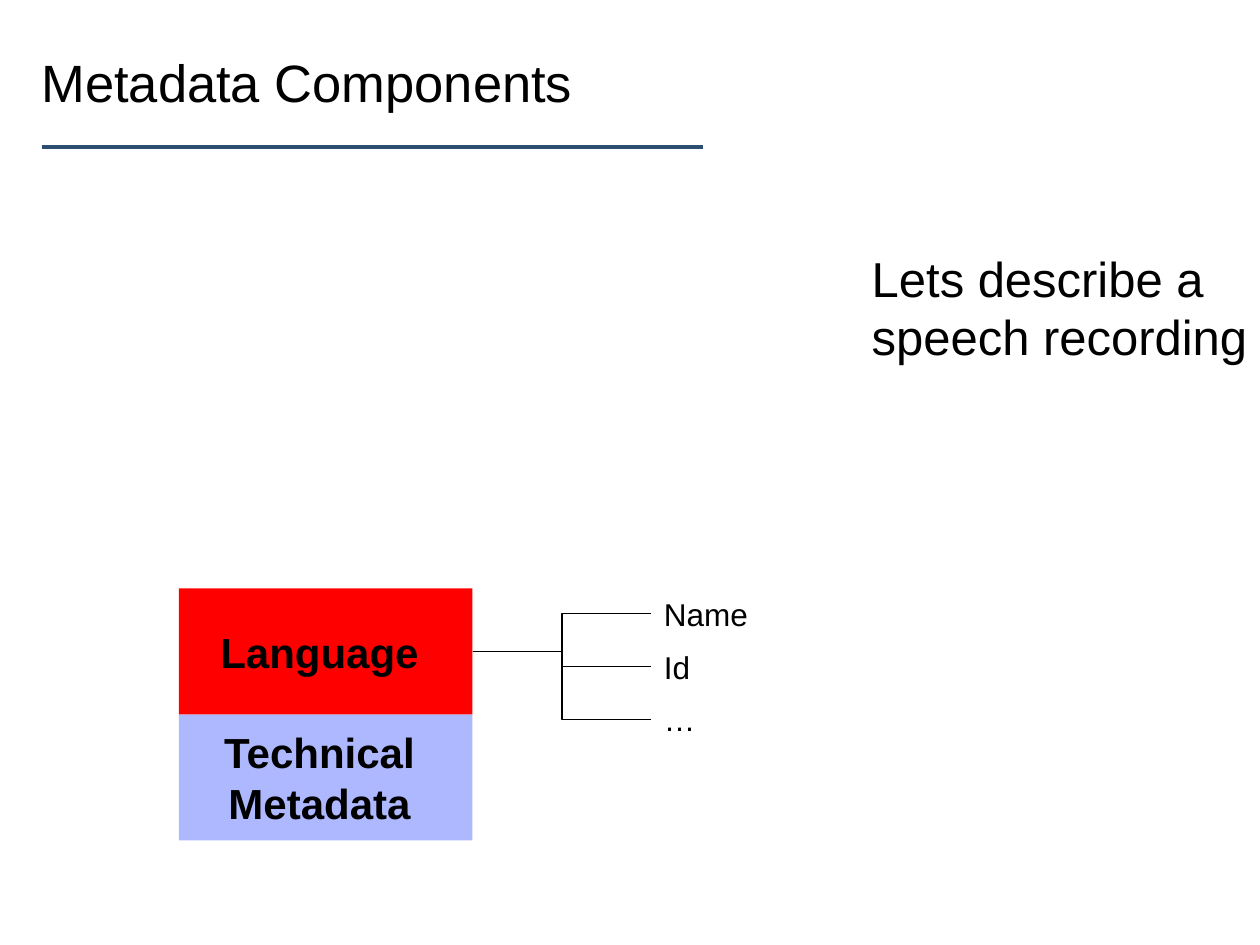
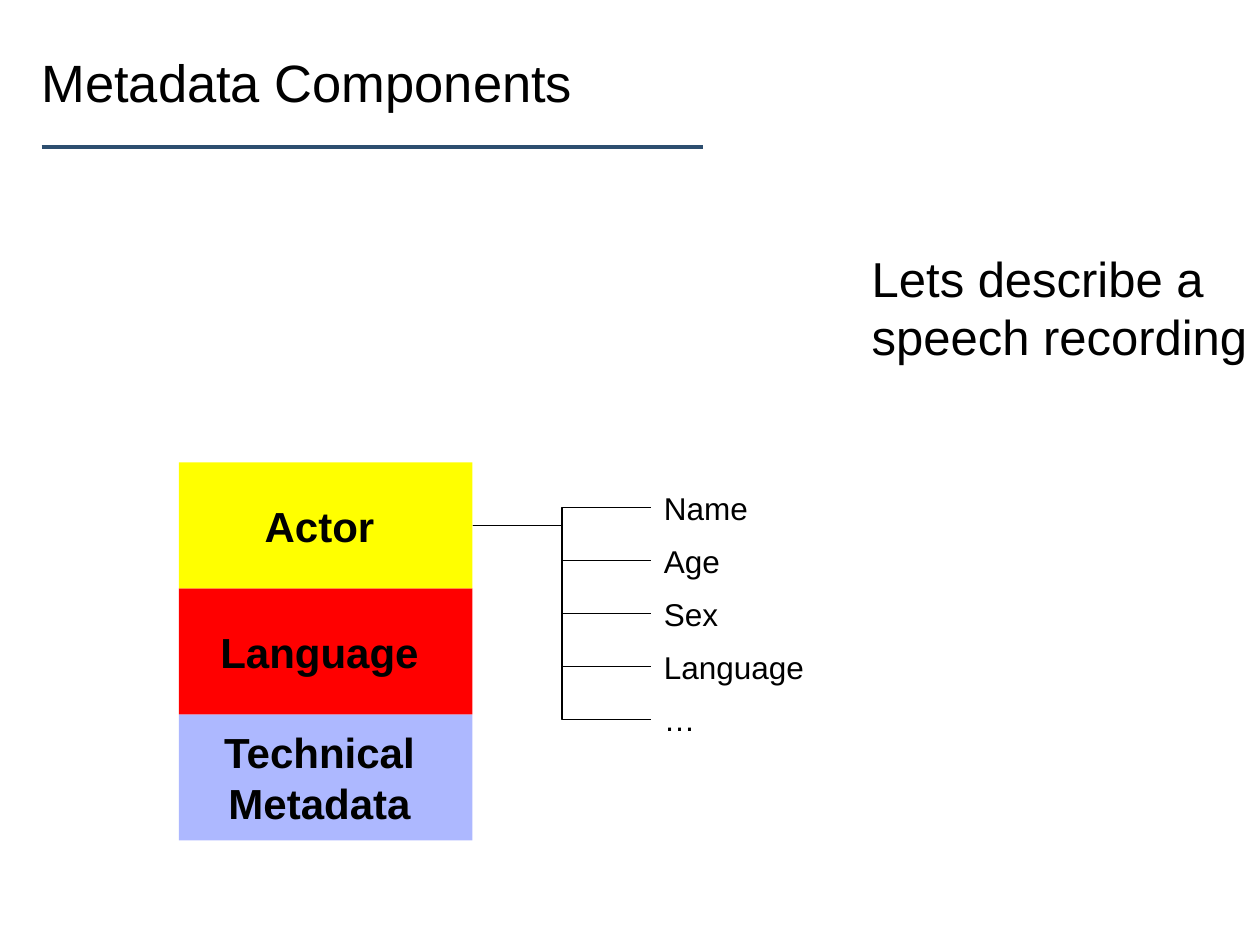
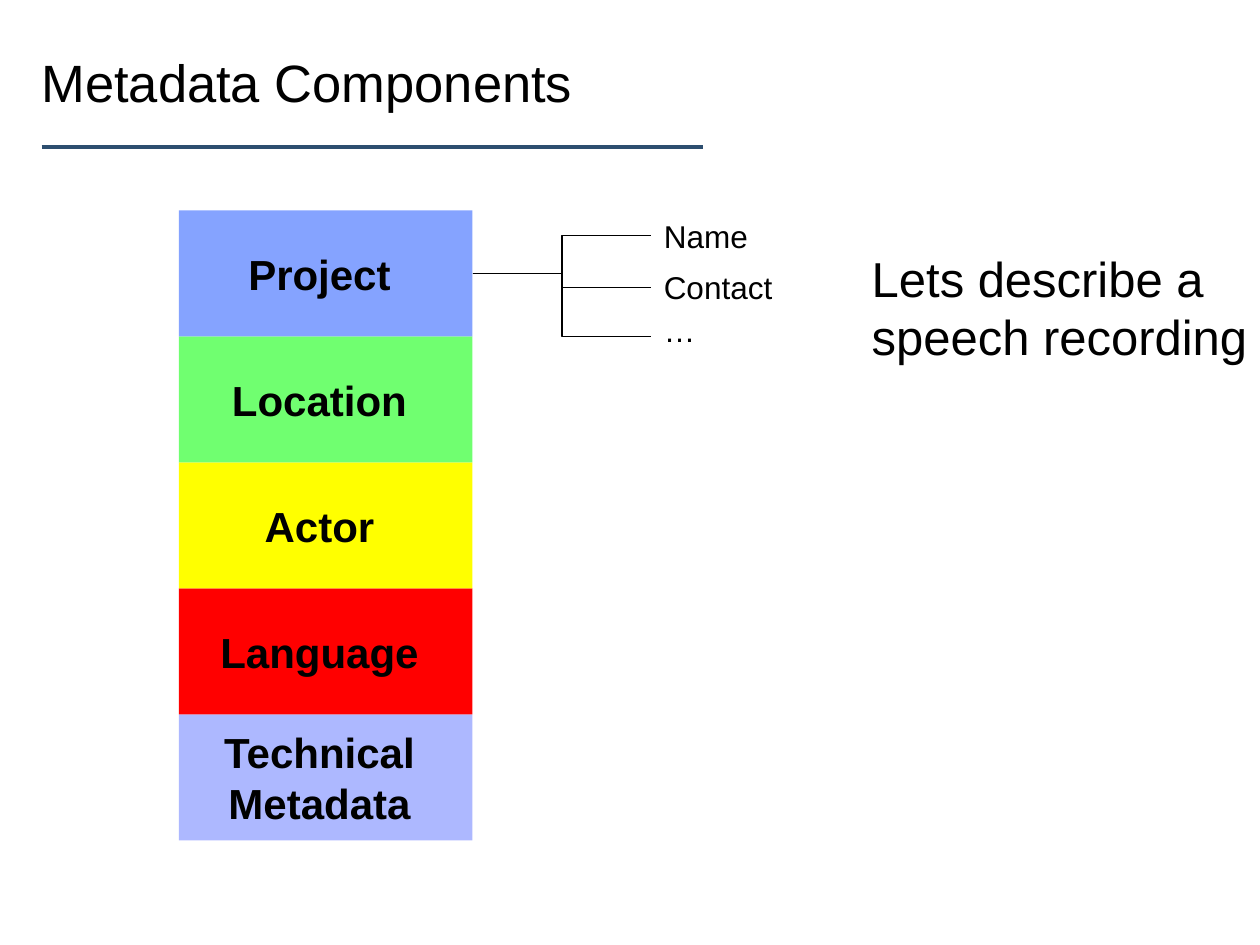
"""Build three slides that stack up metadata components for a speech recording."""
from lxml import etree
from pptx import Presentation
from pptx import util as u
from pptx.dml.color import RGBColor
from pptx.enum import shapes, text
from pptx.oxml.ns import qn

COLOURS = {
    "text": "000000",
    "rule": "2D4E6F",
    "Technical\nMetadata": "ADB8FF",
    "Language": "FF0000",
    "Actor": "FFFF00",
    "Location": "70FF70",
    "Project": "85A3FF",
}
COMPONENTS = ["Technical\nMetadata", "Language", "Actor", "Location", "Project"]
FIELD_WIDTHS = {"Name": 0.88, "Id": 0.41, "Age": 0.67, "Sex": 0.64,
                "Language": 1.33, "Contact": 1.07, "…": 0.45}
FIELD_STEP = 0.42
LAST_FIELD_TOP = 5.51


class Deck:
    """Hold the shared style and the current slide."""

    font = "Arial"

    def __init__(self):
        self.presentation = Presentation()
        self.presentation.slide_width = u.Inches(10)
        self.presentation.slide_height = u.Inches(7.5)
        self.slide = None

    def colour(self, name):
        return RGBColor.from_string(COLOURS[name])

    def set_text(self, shape, words, size, bold=False, align=text.PP_ALIGN.LEFT,
                 anchor=text.MSO_ANCHOR.TOP, left_inset=0.1, wrap=False):
        frame = shape.text_frame
        frame.text = words
        frame.word_wrap = wrap
        frame.auto_size = text.MSO_AUTO_SIZE.NONE
        frame.vertical_anchor = anchor
        frame.margin_left = u.Inches(left_inset)
        for paragraph in frame.paragraphs:
            paragraph.alignment = align
            for run in paragraph.runs:
                run.font.name = self.font
                run.font.size = u.Pt(size)
                run.font.bold = bold
                run.font.color.rgb = self.colour("text")

    def text_box(self, words, left, top, width, height, size, **style):
        box = self.slide.shapes.add_textbox(*map(u.Inches, (left, top, width, height)))
        self.set_text(box, words, size, **style)
        return box

    def line(self, kind, start, end, colour, weight):
        connector = self.slide.shapes.add_connector(kind, *map(u.Inches, start + end))
        connector.line.color.rgb = self.colour(colour)
        connector.line.width = u.Pt(weight)
        etree.SubElement(connector.element.spPr, qn("a:effectLst"))
        return connector

    def new_slide(self, title):
        self.slide = self.presentation.slides.add_slide(self.presentation.slide_layouts[6])
        self.line(shapes.MSO_CONNECTOR.STRAIGHT, (0.33, 1.17), (5.58, 1.17), "rule", 2.25)
        self.text_box(title, 0.33, 0.21, 6.33, 0.88, 30, left_inset=0,
                      anchor=text.MSO_ANCHOR.MIDDLE, wrap=True)
        self.text_box("Lets describe a\nspeech recording", 6.82, 1.92, 3.21, 1.04, 28)

    def component(self, name, level):
        block = self.slide.shapes.add_shape(
            shapes.MSO_SHAPE.RECTANGLE,
            *map(u.Inches, (1.42, 5.67 - level, 2.33, 1)))
        block.shadow.inherit = False
        block.fill.solid()
        block.fill.fore_color.rgb = self.colour(name)
        block.line.fill.background()
        self.set_text(block, name, 24, bold=True, align=text.PP_ALIGN.CENTER,
                      anchor=text.MSO_ANCHOR.MIDDLE, left_inset=0, wrap=True)
        return block

    def field(self, block, name, top, height):
        label = self.text_box(name, 5.17, top, FIELD_WIDTHS[name], height, 18)
        branch = self.line(shapes.MSO_CONNECTOR.ELBOW, (3.75, top), (5.17, top), "text", 0.75)
        branch.begin_connect(block, 3)
        branch.end_connect(label, 1)


def rising_fields(names):
    """Space the fields evenly upwards from the last one."""
    last = len(names) - 1
    return [(name, LAST_FIELD_TOP - FIELD_STEP * (last - index), 0.4)
            for index, name in enumerate(names)]


def main():
    """Build and save the slides."""
    steps = [
        (2, rising_fields(["Name", "Id", "…"])),
        (3, rising_fields(["Name", "Age", "Sex", "Language", "…"])),
        (5, [("Name", 1.67, 0.4), ("Contact", 2.08, 0.4), ("…", 2.42, 0.5)]),
    ]
    deck = Deck()
    for count, fields in steps:
        deck.new_slide("Metadata Components")
        blocks = [deck.component(name, level)
                  for level, name in enumerate(COMPONENTS[:count])]
        for name, top, height in fields:
            deck.field(blocks[-1], name, top, height)
    deck.presentation.save("out.pptx")


if __name__ == "__main__":
    main()
